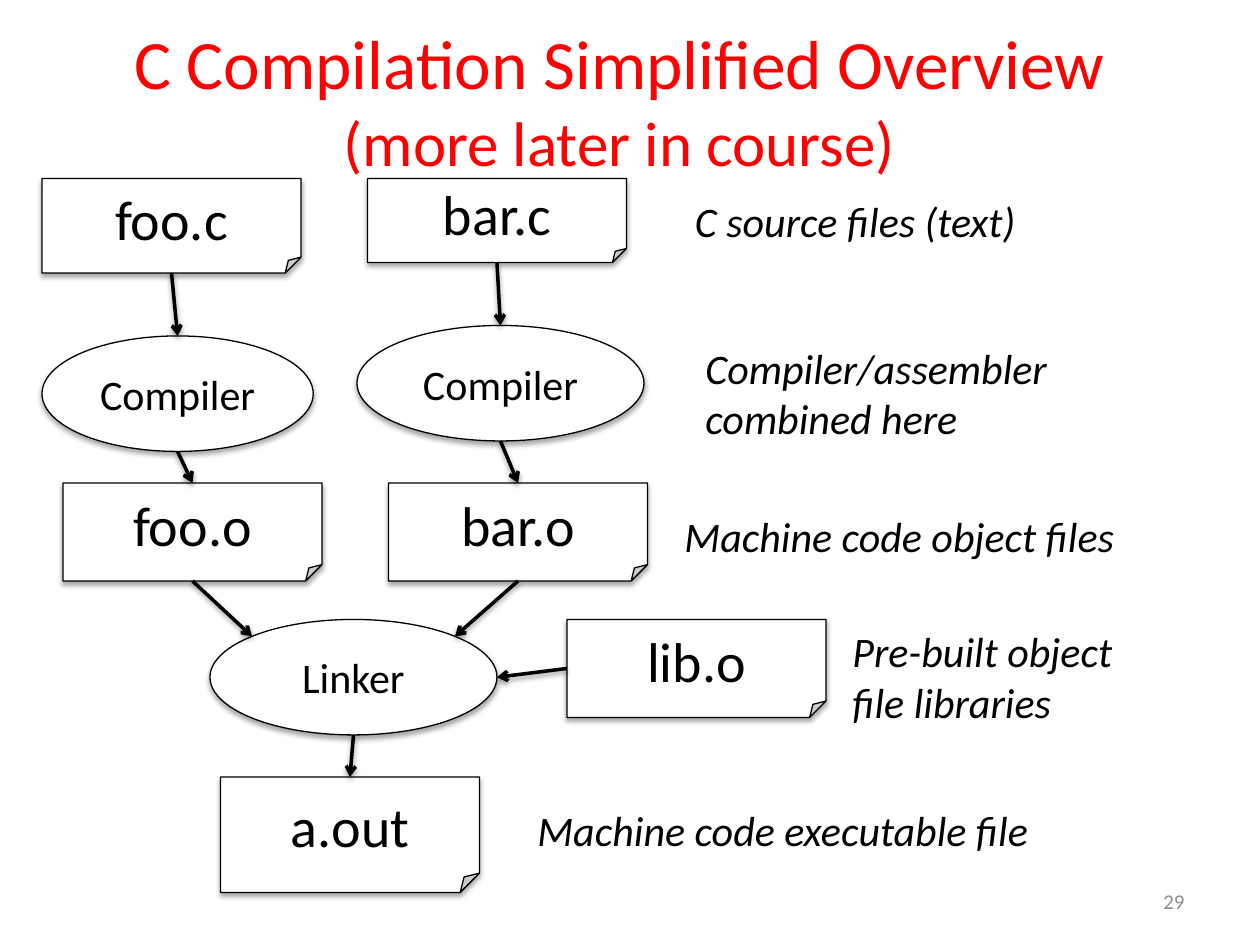
from dataclasses import dataclass
from math import cos, radians, sin

from lxml.etree import SubElement
from pptx import Presentation
from pptx.dml.color import RGBColor
from pptx.enum.shapes import MSO_CONNECTOR as Connector, MSO_SHAPE as Shape
from pptx.enum.text import MSO_ANCHOR as Anchor, MSO_AUTO_SIZE as AutoSize, PP_ALIGN as Align
from pptx.oxml.ns import qn
from pptx.util import Pt

COLORS = {"title": "FF0000", "ink": "000000", "paper": "FFFFFF", "number": "8C8C8C"}
FONT = "Calibri"
TOP, BOTTOM, LEFT, RIGHT = -90, 90, 180, 0
UPPER_LEFT, UPPER_RIGHT = -135, -45
FILE_SITES = {TOP: 0, LEFT: 1, BOTTOM: 2, RIGHT: 3}
FILE_WIDTH, OBJECT_HEIGHT, TOOL_HEIGHT = 148, 56, 66


@dataclass
class Node:
    key: str
    text: str
    left: float
    top: float
    width: float
    height: float
    is_file: bool = True

    def point(self, angle: int) -> tuple[float, float]:
        return (
            self.left + self.width / 2 * (1 + cos(radians(angle))),
            self.top + self.height / 2 * (1 + sin(radians(angle))),
        )

    def site(self, angle: int) -> int | None:
        return FILE_SITES.get(angle) if self.is_file or angle == TOP else None


@dataclass
class Arrow:
    start: str
    end: str
    start_angle: int = BOTTOM
    end_angle: int = TOP


@dataclass
class Label:
    text: str
    left: float
    top: float
    width: float
    height: float = 36
    wrap: bool = False


NODES = [
    Node("foo.c", "foo.c", 24, 102, FILE_WIDTH, 54),
    Node("bar.c", "bar.c", 210, 102, FILE_WIDTH, 48),
    Node("foo compiler", "Compiler", 24, 192, 155, TOOL_HEIGHT, False),
    Node("bar compiler", "Compiler", 204, 186, 164, TOOL_HEIGHT, False),
    Node("foo.o", "foo.o", 36, 276, FILE_WIDTH, OBJECT_HEIGHT),
    Node("bar.o", "bar.o", 222, 276, FILE_WIDTH, OBJECT_HEIGHT),
    Node("linker", "Linker", 120, 354, 164, TOOL_HEIGHT, False),
    Node("lib.o", "lib.o", 324, 354, FILE_WIDTH, OBJECT_HEIGHT),
    Node("a.out", "a.out", 126, 444, FILE_WIDTH, 66),
]
ARROWS = [
    Arrow("foo.c", "foo compiler"),
    Arrow("bar.c", "bar compiler"),
    Arrow("foo compiler", "foo.o"),
    Arrow("bar compiler", "bar.o"),
    Arrow("foo.o", "linker", end_angle=UPPER_LEFT),
    Arrow("bar.o", "linker", end_angle=UPPER_RIGHT),
    Arrow("lib.o", "linker", LEFT, RIGHT),
    Arrow("linker", "a.out"),
]
LABELS = [
    Label("C source files (text)", 390, 108, 206),
    Label("Compiler/assembler combined here", 396, 192, 288, 65.5, True),
    Label("Machine code object files", 384, 288, 268.5),
    Label("Pre-built object file libraries", 480, 354, 178.5, 65.5, True),
    Label("Machine code executable file", 300, 456, 305),
]


def add_run(paragraph, text: str, size: float, color: str, italic: bool = False) -> None:
    run = paragraph.add_run()
    run.text = text
    run.font.name = FONT
    run.font.size = Pt(size)
    run.font.italic = italic
    run.font.color.rgb = RGBColor.from_string(COLORS[color])


def add_shadow(shape, distance: float, opacity: int) -> None:
    shape_properties = shape._element.spPr
    effects = shape_properties.find(qn("a:effectLst"))
    if effects is None:
        effects = SubElement(shape_properties, qn("a:effectLst"))
    shadow = SubElement(
        effects, qn("a:outerShdw"), blurRad=str(Pt(3.1)), dist=str(Pt(distance)),
        dir="5400000", rotWithShape="0",
    )
    color = SubElement(shadow, qn("a:srgbClr"), val=COLORS["ink"])
    SubElement(color, qn("a:alpha"), val=str(opacity * 1000))


def add_title(slide) -> None:
    title = slide.shapes.title
    title.left, title.top, title.width, title.height = Pt(30), Pt(12), Pt(648), Pt(90)
    frame = title.text_frame
    frame.auto_size = AutoSize.NONE
    frame.vertical_anchor = Anchor.MIDDLE
    paragraph = frame.paragraphs[0]
    paragraph.alignment = Align.CENTER
    add_run(paragraph, "C Compilation Simplified Overview", 39.6, "title")
    paragraph.add_line_break()
    add_run(paragraph, "(more later in course)", 36, "title")


def add_slide_number(slide) -> None:
    box = slide.shapes.add_textbox(Pt(516), Pt(500.5), Pt(168), Pt(28.75))
    box.text_frame.word_wrap = True
    box.text_frame.vertical_anchor = Anchor.MIDDLE
    paragraph = box.text_frame.paragraphs[0]
    paragraph.alignment = Align.RIGHT
    add_run(paragraph, "29", 12, "number")


def add_node(slide, node: Node):
    kind = Shape.FOLDED_CORNER if node.is_file else Shape.OVAL
    shape = slide.shapes.add_shape(
        kind, Pt(node.left), Pt(node.top), Pt(node.width), Pt(node.height)
    )
    shape.fill.solid()
    shape.fill.fore_color.rgb = RGBColor.from_string(COLORS["paper"])
    shape.line.color.rgb = RGBColor.from_string(COLORS["ink"])
    shape.line.width = Pt(0.75)
    shape.shadow.inherit = False
    add_shadow(shape, 1.8, 35)
    shape.text_frame.vertical_anchor = Anchor.MIDDLE
    paragraph = shape.text_frame.paragraphs[0]
    paragraph.alignment = Align.CENTER
    add_run(paragraph, node.text, 32 if node.is_file else 24, "ink")
    return shape


def add_arrow(slide, arrow: Arrow, nodes: dict[str, Node], shapes: dict) -> None:
    start, end = nodes[arrow.start], nodes[arrow.end]
    points = start.point(arrow.start_angle) + end.point(arrow.end_angle)
    line = slide.shapes.add_connector(Connector.STRAIGHT, *(Pt(value) for value in points))
    start_site, end_site = start.site(arrow.start_angle), end.site(arrow.end_angle)
    if start_site is not None:
        line.begin_connect(shapes[arrow.start], start_site)
    if end_site is not None:
        line.end_connect(shapes[arrow.end], end_site)
    line.line.color.rgb = RGBColor.from_string(COLORS["ink"])
    line.line.width = Pt(2)
    SubElement(line.line._get_or_add_ln(), qn("a:tailEnd"), type="arrow")
    add_shadow(line, 1.6, 38)


def add_label(slide, label: Label) -> None:
    box = slide.shapes.add_textbox(
        Pt(label.left), Pt(label.top), Pt(label.width), Pt(label.height)
    )
    box.text_frame.word_wrap = label.wrap
    box.text_frame.auto_size = AutoSize.SHAPE_TO_FIT_TEXT
    add_run(box.text_frame.paragraphs[0], label.text, 24, "ink", True)


def main() -> None:
    presentation = Presentation()
    presentation.slide_width, presentation.slide_height = Pt(720), Pt(540)
    slide = presentation.slides.add_slide(presentation.slide_layouts[5])
    add_title(slide)
    add_slide_number(slide)
    nodes = {node.key: node for node in NODES}
    shapes = {key: add_node(slide, node) for key, node in nodes.items()}
    for arrow in ARROWS:
        add_arrow(slide, arrow, nodes, shapes)
    for label in LABELS:
        add_label(slide, label)
    presentation.save("out.pptx")


if __name__ == "__main__":
    main()
